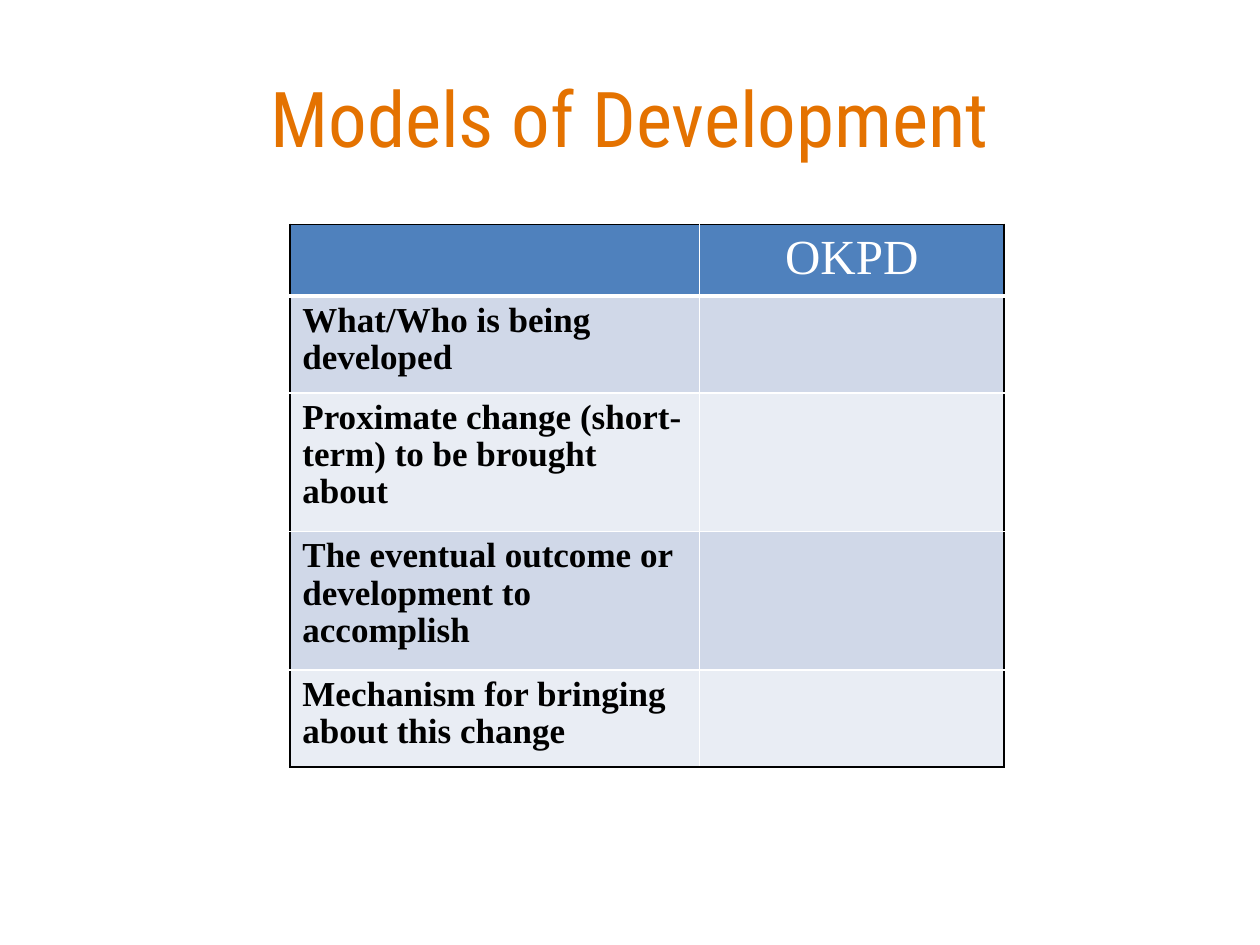
from dataclasses import dataclass

from lxml import etree
from pptx import Presentation
from pptx.dml.color import RGBColor
from pptx.enum.text import MSO_ANCHOR, PP_ALIGN
from pptx.oxml.ns import qn
from pptx.util import Inches, Pt

CENTER = PP_ALIGN.CENTER
LEFT = PP_ALIGN.LEFT
MIDDLE = MSO_ANCHOR.MIDDLE

SLIDE_WIDTH, SLIDE_HEIGHT = Inches(10), Inches(7.5)
COLUMN_WIDTHS = (3.25, 2.42)
ROW_HEIGHTS = (0.57, 0.77, 1.1, 1.1, 0.77)
MODEL_ROWS = (
    ("", "OKPD"),
    ("What/Who is being developed", ""),
    ("Proximate change (short-term) to be brought about", ""),
    ("The eventual outcome or development to accomplish", ""),
    ("Mechanism for bringing about this change", ""),
)


@dataclass(frozen=True)
class Theme:
    title_font: str = "Roboto Condensed"
    table_font: str = "Times New Roman"
    title_size: int = 44
    header_size: int = 28
    body_size: int = 20
    title: str = "E47200"
    header_fill: str = "4F81BD"
    bands: tuple = ("D0D8E8", "E9EDF4")
    inner_line: str = "FFFFFF"
    outer_line: str = "000000"
    header_text: str = "FFFFFF"
    body_text: str = "000000"


THEME = Theme()


def write(frame, text, font, size, color, bold=False, align=LEFT):
    frame.text = text
    paragraph = frame.paragraphs[0]
    paragraph.alignment = align
    for run in paragraph.runs:
        run.font.name = font
        run.font.size = Pt(size)
        run.font.bold = bold
        run.font.color.rgb = RGBColor.from_string(color)
    return paragraph


def add_title(slide, text):
    box = slide.shapes.add_textbox(
        int(SLIDE_WIDTH * 0.05), int(SLIDE_HEIGHT * 0.04),
        int(SLIDE_WIDTH * 0.9), Inches(1.25))
    frame = box.text_frame
    frame.word_wrap = True
    frame.vertical_anchor = MIDDLE
    write(frame, text, THEME.title_font, THEME.title_size, THEME.title, align=CENTER)


def set_borders(cell, borders):
    """Draw (tag, colour, points) lines, placed ahead of the cell's fill."""
    properties = cell._tc.get_or_add_tcPr()
    for position, (tag, color, points) in enumerate(borders):
        line = etree.Element(qn(f"a:{tag}"), w=str(Pt(points)))
        fill = etree.SubElement(line, qn("a:solidFill"))
        etree.SubElement(fill, qn("a:srgbClr"), val=color)
        properties.insert(position, line)


def style_cell(cell, row, column):
    last_row, last_column = len(ROW_HEIGHTS) - 1, len(COLUMN_WIDTHS) - 1
    fill = THEME.bands[(row - 1) % 2] if row else THEME.header_fill
    cell.fill.solid()
    cell.fill.fore_color.rgb = RGBColor.from_string(fill)

    def edge(is_outer):
        return THEME.outer_line if is_outer else THEME.inner_line

    set_borders(cell, (
        ("lnL", edge(column == 0), 1),
        ("lnR", edge(column == last_column), 1),
        ("lnT", edge(row == 0), 3 if row == 1 else 1),
        ("lnB", edge(row == last_row), 3 if row == 0 else 1),
    ))


def add_model_table(slide):
    table = slide.shapes.add_table(
        len(ROW_HEIGHTS), len(COLUMN_WIDTHS), Inches(2.3), Inches(1.78),
        Inches(sum(COLUMN_WIDTHS)), Inches(sum(ROW_HEIGHTS))).table
    for column, width in zip(table.columns, COLUMN_WIDTHS):
        column.width = Inches(width)
    for row, height in zip(table.rows, ROW_HEIGHTS):
        row.height = Inches(height)
    for r, texts in enumerate(MODEL_ROWS):
        for c, text in enumerate(texts):
            cell = table.cell(r, c)
            style_cell(cell, r, c)
            if not text:
                continue
            if r == 0:
                write(cell.text_frame, text, THEME.table_font,
                      THEME.header_size, THEME.header_text, align=CENTER)
            else:
                label = write(cell.text_frame, text, THEME.table_font,
                              THEME.body_size, THEME.body_text, bold=True)
                label.line_spacing = 0.96


def main():
    presentation = Presentation()
    presentation.slide_width = SLIDE_WIDTH
    presentation.slide_height = SLIDE_HEIGHT
    slide = presentation.slides.add_slide(presentation.slide_layouts[6])
    add_model_table(slide)
    add_title(slide, "Models of Development")
    presentation.save("out.pptx")


if __name__ == "__main__":
    main()
